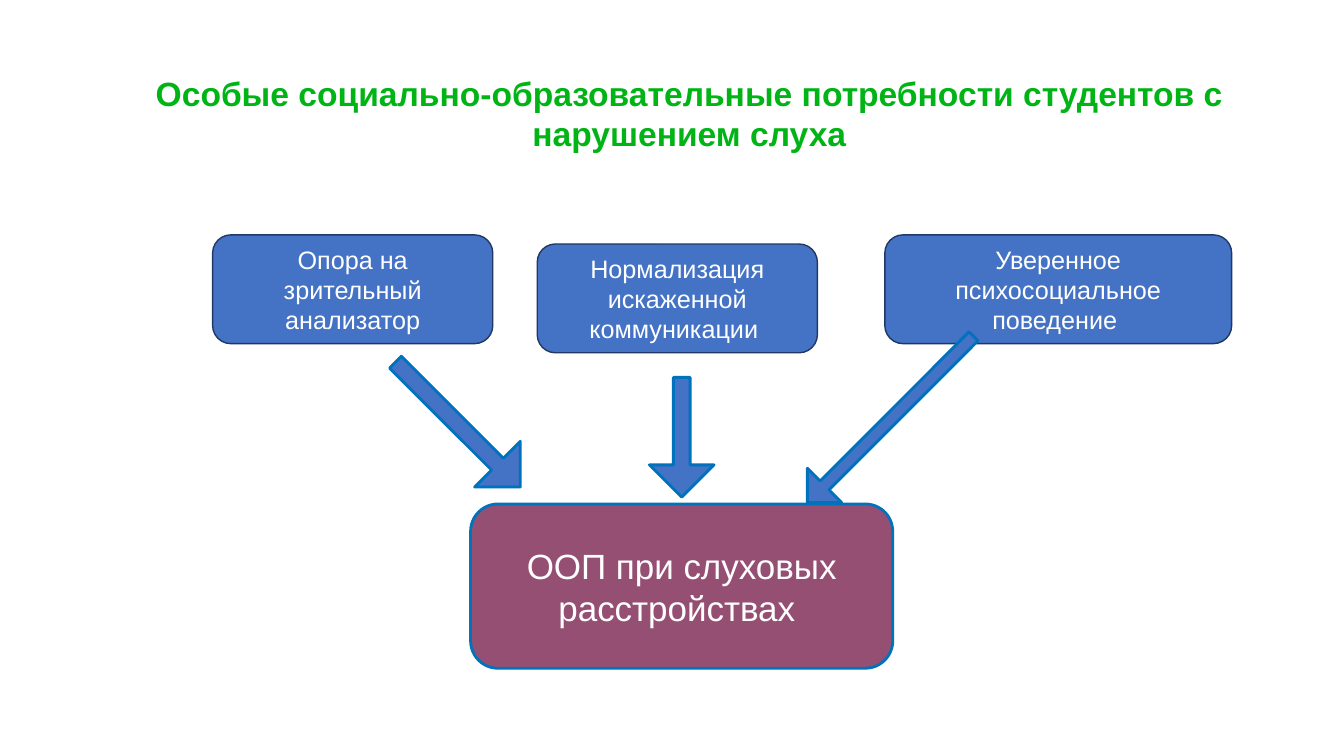
from collections import namedtuple

from pptx import Presentation
from pptx.dml.color import RGBColor
from pptx.enum.shapes import MSO_SHAPE as Shape
from pptx.enum.text import MSO_ANCHOR as Anchor, MSO_AUTO_SIZE as AutoSize, PP_ALIGN as Align
from pptx.util import Cm, Pt

GREEN = RGBColor(0x00, 0xB4, 0x15)
BLUE = RGBColor(0x44, 0x72, 0xC4)
NAVY = RGBColor(0x20, 0x38, 0x64)
ARROW_EDGE = RGBColor(0x00, 0x71, 0xBC)
PLUM = RGBColor(0x95, 0x4F, 0x72)
PLUM_EDGE = RGBColor(0x00, 0x73, 0xBA)
WHITE = RGBColor(0xFF, 0xFF, 0xFF)

# Lengths in centimetres
Box = namedtuple("Box", "left top width height")
TITLE_BOX = Box(2.84, 1.7, 29.06, 2.31)
NEEDS_BOX = Box(5.36, 5.92, 25.68, 2.97)
ARROWS_BOX = Box(9.32, 8.4, 15.6, 4.3)
TARGET_BOX = Box(11.86, 12.7, 10.64, 4.14)

# Text, then left offset, top offset and width within the row
NEEDS = [
    ("Опора на зрительный анализатор", 0, 0, 7.06),
    ("Нормализация искаженной коммуникации ", 8.18, 0.23, 7.06),
    ("Уверенное психосоциальное поведение ", 16.94, 0, 8.74),
]
NEED_HEIGHT = 2.74

# Centre offsets within the region, length, thickness and rotation
ARROWS = [
    (2.22, 2.3, 4.45, 1.63, 45),
    (13.12, 2.17, 5.92, 1.22, 135),
    (7.86, 2.62, 3.02, 1.63, 90),
]


def write_text(shape, text, size, color, anchor, bold=False):
    frame = shape.text_frame
    frame.word_wrap = True
    frame.auto_size = AutoSize.NONE
    frame.vertical_anchor = anchor
    frame.text = text
    paragraph = frame.paragraphs[0]
    paragraph.alignment = Align.CENTER
    font = paragraph.font
    font.name, font.size, font.bold = "Arial", Pt(size), bold
    font.color.rgb = color


def add_filled(slide, kind, box, fill, edge, edge_width):
    shape = slide.shapes.add_shape(kind, *map(Cm, box))
    shape.shadow.inherit = False
    shape.fill.solid()
    shape.fill.fore_color.rgb = fill
    shape.line.color.rgb = edge
    shape.line.width = Pt(edge_width)
    return shape


def place_title(slide, box):
    title = slide.shapes.title
    title.left, title.top, title.width, title.height = map(Cm, box)
    write_text(title, "Особые социально-образовательные потребности студентов с нарушением слуха",
               24, GREEN, Anchor.TOP, bold=True)


def draw_needs(slide, box):
    for text, dx, dy, width in NEEDS:
        need_box = Box(box.left + dx, box.top + dy, width, NEED_HEIGHT)
        need = add_filled(slide, Shape.ROUNDED_RECTANGLE, need_box, BLUE, NAVY, 1)
        write_text(need, text, 18, WHITE, Anchor.MIDDLE)


def draw_arrows(slide, box):
    for dx, dy, length, thickness, rotation in ARROWS:
        arrow_box = Box(box.left + dx - length / 2, box.top + dy - thickness / 2,
                        length, thickness)
        arrow = add_filled(slide, Shape.RIGHT_ARROW, arrow_box, BLUE, ARROW_EDGE, 2)
        arrow.adjustments[0] = 0.26
        arrow.rotation = rotation


def draw_target(slide, box):
    target = add_filled(slide, Shape.ROUNDED_RECTANGLE, box, PLUM, PLUM_EDGE, 2)
    write_text(target, "ООП при слуховых расстройствах ", 25, WHITE, Anchor.MIDDLE)


def main():
    presentation = Presentation()
    presentation.slide_width, presentation.slide_height = Cm(33.87), Cm(19.05)
    title_only = presentation.slide_layouts[5]
    slide = presentation.slides.add_slide(title_only)
    place_title(slide, TITLE_BOX)
    draw_needs(slide, NEEDS_BOX)
    draw_arrows(slide, ARROWS_BOX)
    draw_target(slide, TARGET_BOX)
    presentation.save("out.pptx")


if __name__ == "__main__":
    main()
